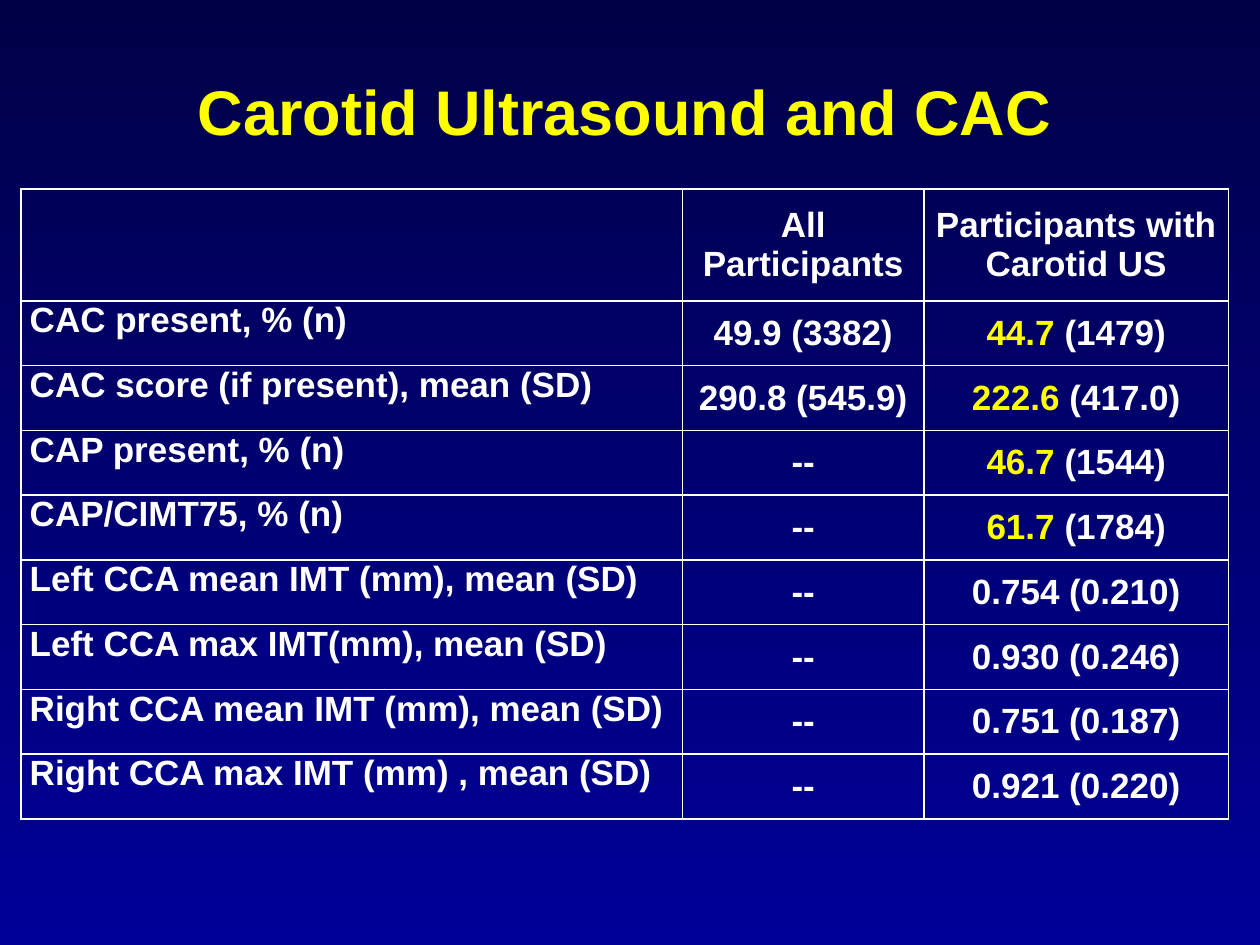
from lxml import etree
from pptx import Presentation
from pptx.dml.color import RGBColor
from pptx.enum.text import MSO_ANCHOR, PP_ALIGN
from pptx.oxml.ns import qn
from pptx.util import Pt

LEFT, CENTER = PP_ALIGN.LEFT, PP_ALIGN.CENTER
TOP, MIDDLE = MSO_ANCHOR.TOP, MSO_ANCHOR.MIDDLE
TITLE_ONLY = 5
FONT = "Arial"
COLORS = {
    "background_top": "000047",
    "background_bottom": "000099",
    "highlight": "FFFF00",
    "text": "FFFFFF",
    "border": "FFFFFF",
}
COLUMN_WIDTHS = (378, 138, 174)
HEADER_HEIGHT = 64
HEADERS = ("", "All Participants", "Participants with Carotid US")
# Label, all participants, highlighted figure, rest of the last column
RESULTS = (
    ("CAC present, % (n)", "49.9 (3382)", "44.7 ", "(1479)"),
    ("CAC score (if present), mean (SD)", "290.8 (545.9)", "222.6 ", "(417.0)"),
    ("CAP present, % (n)", "--", "46.7 ", "(1544)"),
    ("CAP/CIMT75, % (n)", "--", "61.7 ", "(1784)"),
    ("Left CCA mean IMT (mm), mean (SD)", "--", "", "0.754 (0.210)"),
    ("Left CCA max IMT(mm), mean (SD)", "--", "", "0.930 (0.246)"),
    ("Right CCA mean IMT (mm), mean (SD)", "--", "", "0.751 (0.187)"),
    ("Right CCA max IMT (mm) , mean (SD)", "--", "", "0.921 (0.220)"),
)


def add_text(text_frame, text, size=20, color="text", align=CENTER):
    """Append a bold run to the first paragraph."""
    paragraph = text_frame.paragraphs[0]
    paragraph.alignment = align
    run = paragraph.add_run()
    run.text = text
    run.font.name = FONT
    run.font.size = Pt(size)
    run.font.bold = True
    run.font.color.rgb = RGBColor.from_string(COLORS[color])


def set_borders(cell, width=1):
    properties = cell._tc.get_or_add_tcPr()
    for index, side in enumerate(("lnL", "lnR", "lnT", "lnB")):
        line = etree.Element(qn(f"a:{side}"), w=str(Pt(width)))
        fill = etree.SubElement(line, qn("a:solidFill"))
        etree.SubElement(fill, qn("a:srgbClr"), val=COLORS["border"])
        properties.insert(index, line)


def fill_cell(cell, parts, align=CENTER, anchor=MIDDLE):
    """Format a cell and write its (text, color) parts."""
    cell.fill.background()
    set_borders(cell)
    cell.margin_left = cell.margin_right = Pt(5)
    cell.margin_top = cell.margin_bottom = Pt(0)
    cell.vertical_anchor = anchor
    for text, color in parts:
        if text:
            add_text(cell.text_frame, text, color=color, align=align)


def set_background(slide):
    fill = slide.background.fill
    fill.gradient()
    fill.gradient_angle = 270
    for stop, name in zip(fill.gradient_stops, ("background_top", "background_bottom")):
        stop.color.rgb = RGBColor.from_string(COLORS[name])


def place_title(slide, left, top, width, height):
    title = slide.shapes.title
    title.left, title.top = Pt(left), Pt(top)
    title.width, title.height = Pt(width), Pt(height)
    title.text_frame.vertical_anchor = MIDDLE
    add_text(title.text_frame, "Carotid Ultrasound and CAC", size=36, color="highlight")


def add_results_table(slide, left, top, width, height):
    frame = slide.shapes.add_table(
        len(RESULTS) + 1, len(HEADERS), Pt(left), Pt(top), Pt(width), Pt(height)
    )
    table = frame.table
    table.first_row = table.horz_banding = False
    for column, share in zip(table.columns, COLUMN_WIDTHS):
        column.width = Pt(width * share / sum(COLUMN_WIDTHS))
    for row in table.rows:
        row.height = Pt((height - HEADER_HEIGHT) / len(RESULTS))
    table.rows[0].height = Pt(HEADER_HEIGHT)

    for index, header in enumerate(HEADERS):
        fill_cell(table.cell(0, index), [(header, "text")])
    for index, (label, everyone, figure, rest) in enumerate(RESULTS, start=1):
        fill_cell(table.cell(index, 0), [(label, "text")], align=LEFT, anchor=TOP)
        fill_cell(table.cell(index, 1), [(everyone, "text")])
        fill_cell(table.cell(index, 2), [(figure, "highlight"), (rest, "text")])


def main():
    presentation = Presentation()
    presentation.slide_width, presentation.slide_height = Pt(720), Pt(540)
    slide = presentation.slides.add_slide(presentation.slide_layouts[TITLE_ONLY])
    set_background(slide)
    place_title(slide, 33, 18, 648, 90)
    add_results_table(slide, 12, 108, 690, 360)
    presentation.save("out.pptx")


if __name__ == "__main__":
    main()
